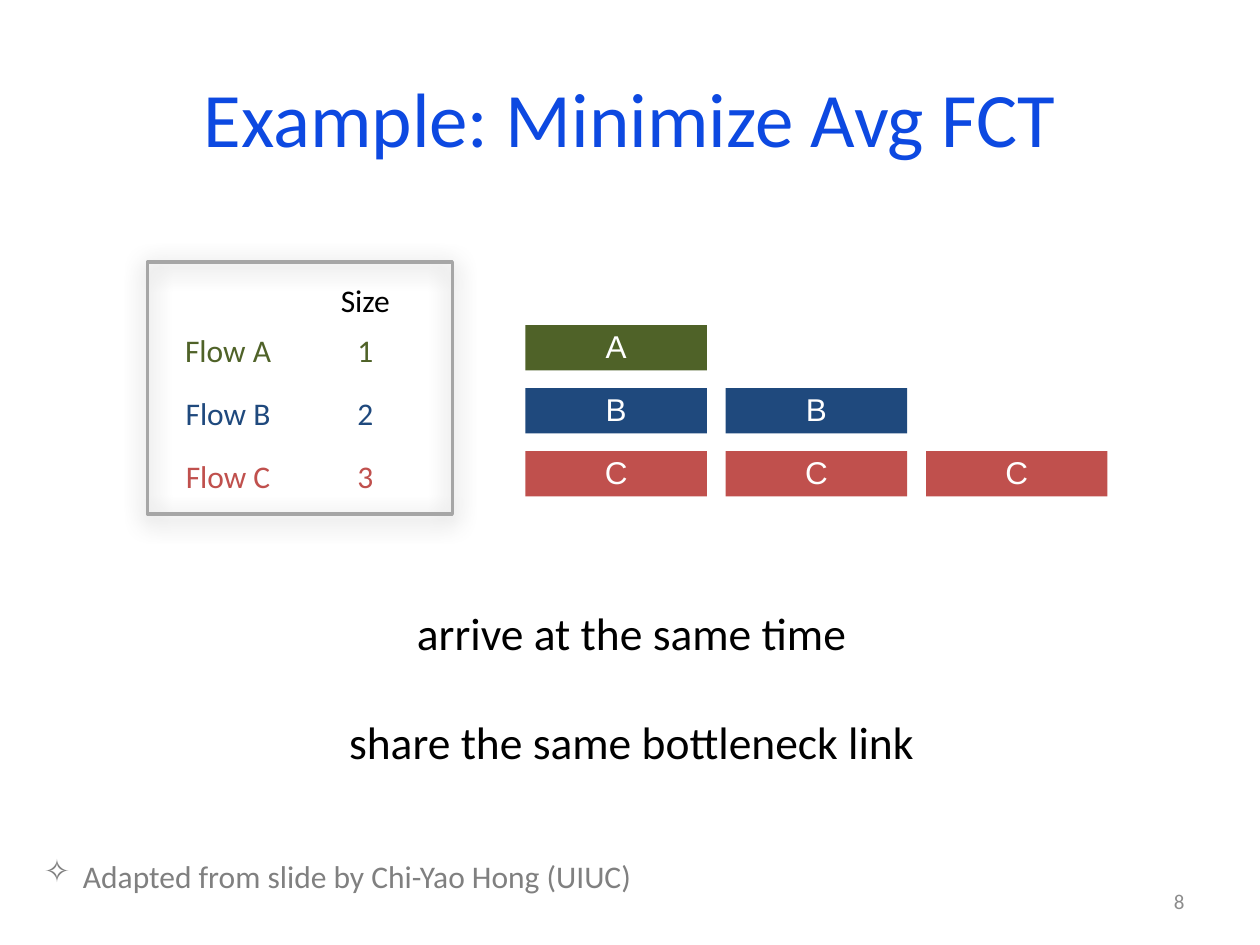
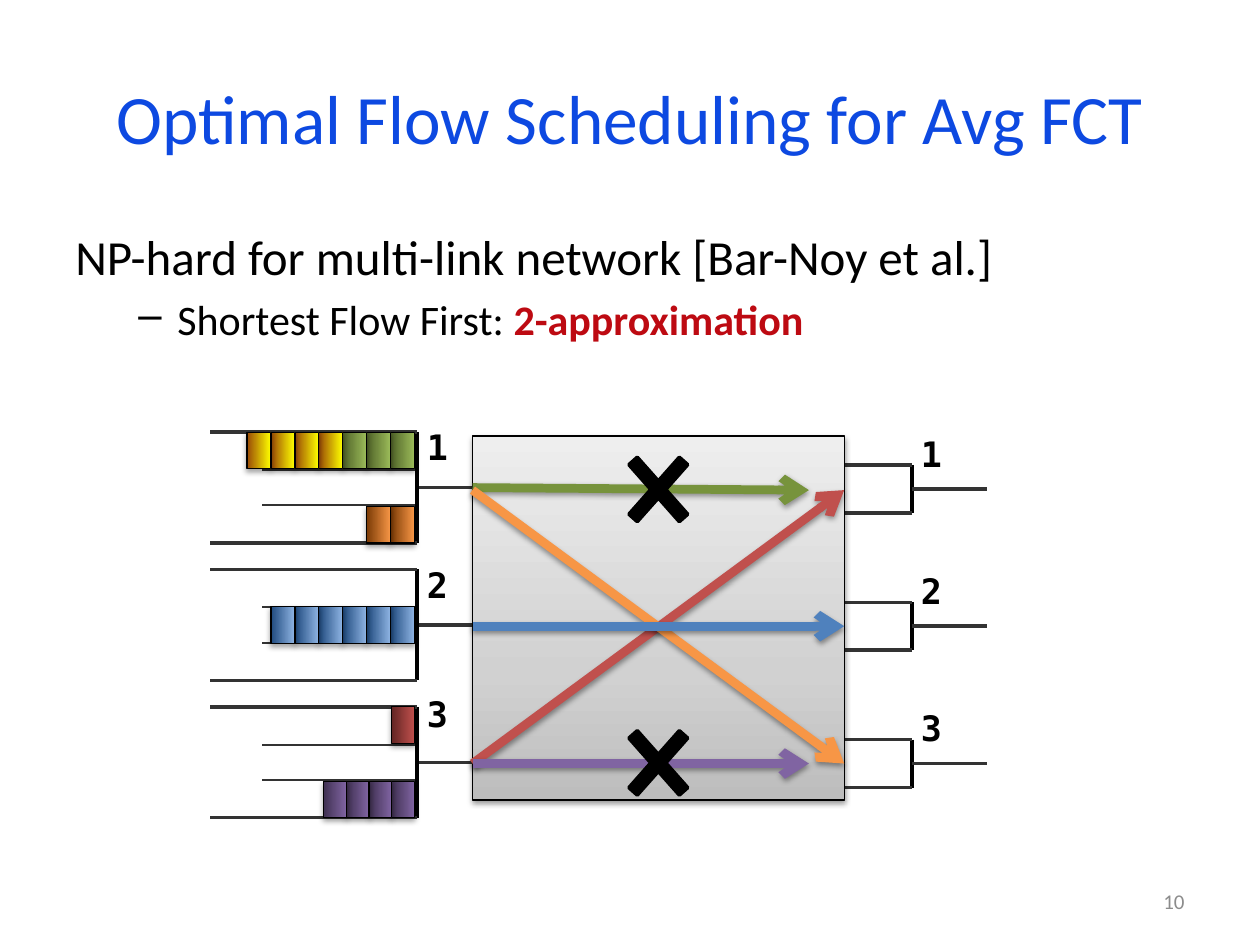
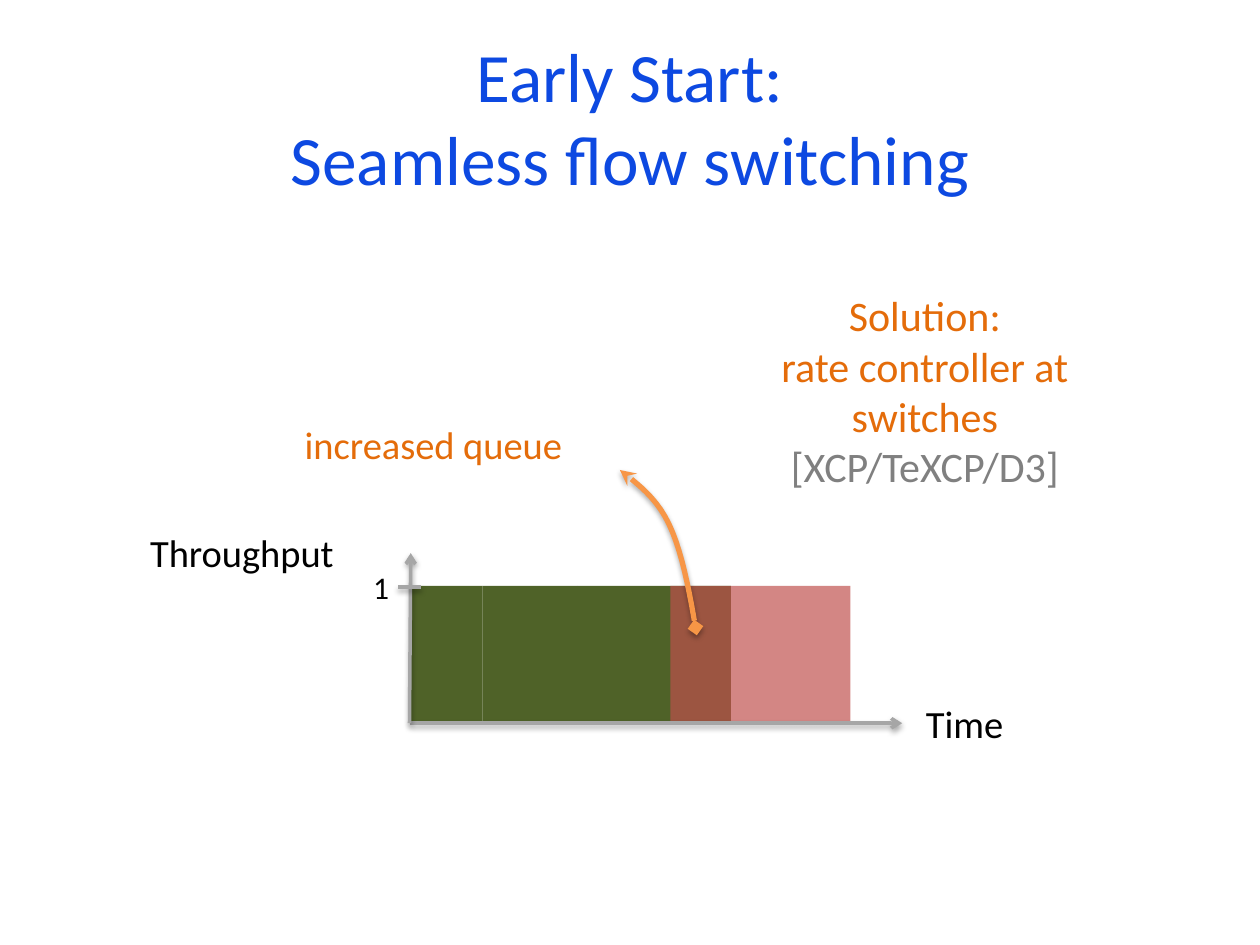
"""Builds three slides on flow scheduling."""
import math

import lxml.etree
import pptx
import pptx.dml.color
import pptx.enum.shapes
import pptx.enum.text
import pptx.oxml.ns
import pptx.util

Inches = pptx.util.Inches
Pt = pptx.util.Pt
RGBColor = pptx.dml.color.RGBColor
SHAPE = pptx.enum.shapes.MSO_SHAPE
ALIGN = pptx.enum.text.PP_ALIGN
MIDDLE = pptx.enum.text.MSO_ANCHOR.MIDDLE
qn = pptx.oxml.ns.qn

BLUE = RGBColor(0x0D, 0x49, 0xE1)
BLACK = RGBColor(0, 0, 0)
WHITE = RGBColor(0xFF, 0xFF, 0xFF)
INK = RGBColor(0x33, 0x33, 0x33)
GRAY = RGBColor(0x80, 0x80, 0x80)
PALE = RGBColor(0x8C, 0x8C, 0x8C)
SILVER = RGBColor(0xA6, 0xA6, 0xA6)
MOSS = RGBColor(0x4F, 0x62, 0x28)
NAVY = RGBColor(0x1F, 0x49, 0x7D)
BRICK = RGBColor(0xC0, 0x50, 0x4D)
CRIMSON = RGBColor(0xBD, 0x0A, 0x12)
RUST = RGBColor(0xE4, 0x6C, 0x0A)
ORANGE = RGBColor(0xF7, 0x96, 0x46)
LEAF = RGBColor(0x77, 0x93, 0x3C)
PLUM = RGBColor(0x80, 0x64, 0xA2)
SKY = RGBColor(0x4F, 0x81, 0xBD)

GREENS = ((0, MOSS), (100, RGBColor(0x9B, 0xBB, 0x59)))
YELLOWS = ((0, RGBColor(0x98, 0x48, 0x07)), (100, RGBColor(0xFF, 0xFF, 0)))
ORANGES = ((0, RGBColor(0x7A, 0x3A, 0x05)), (100, ORANGE))
BLUES = ((0, NAVY), (100, RGBColor(0x8E, 0xB4, 0xE3)))
REDS = ((0, RGBColor(0x63, 0x25, 0x23)), (100, BRICK))
PURPLES = ((0, RGBColor(0x40, 0x31, 0x52)), (100, PLUM))
STEEL = ((0, RGBColor(0xBD, 0xBD, 0xBD)), (35, RGBColor(0xD1, 0xD1, 0xD1)),
         (100, RGBColor(0xEE, 0xEE, 0xEE)))

GLOW = (40, 14, 3)
SOFT = (35, 3.1, 1.8)
DEEP = (38, 3.1, 1.6)

FLOWS = (("A", MOSS), ("B", NAVY), ("C", BRICK))


def place(box):
    """Turn a box in inches into lengths."""
    return [Inches(value) for value in box]


def add(parent, tag, **attrs):
    """Append a drawing element to its parent."""
    return lxml.etree.SubElement(parent, qn("a:" + tag), **attrs)


def cast(item, shadow=None):
    """Give an item its own shadow, or none."""
    props = item._element.spPr
    effects = props.find(qn("a:effectLst"))
    if effects is None:
        effects = add(props, "effectLst")
    if shadow:
        alpha, blur, dist = shadow
        outer = add(effects, "outerShdw", blurRad=str(Pt(blur)), dist=str(Pt(dist)),
                    dir="5400000", rotWithShape="0")
        add(add(outer, "srgbClr", val=str(BLACK)), "alpha", val=str(alpha * 1000))


def cap(item, head=None, tail=None):
    """Put arrowheads on a line."""
    for tag, kind in (("headEnd", head), ("tailEnd", tail)):
        if kind:
            add(item.line._get_or_add_ln(), tag, type=kind)


def shade(item, stops, angle=0):
    """Fill a shape with a gradient."""
    item.fill.gradient()
    item.fill.gradient_angle = angle
    holder = item._element.spPr.find(qn("a:gradFill")).find(qn("a:gsLst"))
    for old in list(holder):
        holder.remove(old)
    for spot, color in stops:
        add(add(holder, "gs", pos=str(spot * 1000)), "srgbClr", val=str(color))


def form(slide, box, fill=None, edge=None, width=0.75, shadow=None, kind=SHAPE.RECTANGLE):
    """Add a preset shape."""
    item = slide.shapes.add_shape(kind, *place(box))
    item.shadow.inherit = False
    if fill is None:
        item.fill.background()
    else:
        item.fill.solid()
        item.fill.fore_color.rgb = fill
    if edge is None:
        item.line.fill.background()
    else:
        item.line.color.rgb = edge
        item.line.width = Pt(width)
    cast(item, shadow)
    return item


def line(slide, start, end, color=INK, width=2, tail=None, shadow=None):
    """Add a straight line, with an arrowhead if asked."""
    item = slide.shapes.add_connector(
        pptx.enum.shapes.MSO_CONNECTOR.STRAIGHT, *place(start + end))
    item.line.color.rgb = color
    item.line.width = Pt(width)
    cap(item, tail=tail)
    cast(item, shadow)


def style(para, size, color, align=ALIGN.LEFT, font="Calibri", bold=False):
    """Format a paragraph."""
    para.alignment = align
    para.font.size = Pt(size)
    para.font.name = font
    para.font.bold = bold
    para.font.color.rgb = color


def text(slide, box, words, size, color=BLACK, align=ALIGN.LEFT, wrap=True, **looks):
    """Add a text box and return its frame."""
    frame = slide.shapes.add_textbox(*place(box)).text_frame
    frame.word_wrap = wrap
    frame.text = words
    for para in frame.paragraphs:
        style(para, size, color, align, **looks)
    return frame


def bullet(para, mark, left, hang):
    """Give a paragraph a bullet and a hanging indent."""
    props = para._p.get_or_add_pPr()
    props.set("marL", str(Inches(left)))
    props.set("indent", str(-Inches(hang)))
    add(props, "buChar", char=mark)


def start(deck, title, size, number=None):
    """Add a slide with its title and number."""
    slide = deck.slides.add_slide(deck.slide_layouts[5])
    head = slide.shapes.title
    head.left, head.top, head.width, head.height = place((0.5, 0.3, 9, 1.25))
    frame = head.text_frame
    frame.text = title
    frame.word_wrap = True
    frame.auto_size = pptx.enum.text.MSO_AUTO_SIZE.NONE
    frame.vertical_anchor = MIDDLE
    style(frame.paragraphs[0], size, BLUE, ALIGN.CENTER)
    if number:
        foot = text(slide, (7.17, 6.95, 2.33, 0.4), number, 12, PALE, ALIGN.RIGHT)
        foot.vertical_anchor = MIDDLE
    return slide


def sizes(slide, box):
    """Draw the framed list of flow sizes."""
    left, top = box[:2]
    cells = [("Size", 1.43, 0.1, BLACK)]
    for row, (name, color) in enumerate(FLOWS):
        y = 0.5 + 0.5 * row
        cells += [("Flow " + name, 0.18, y, color), (str(row + 1), 1.43, y, color)]
    for words, x, y, color in cells:
        wide = 0.6 if x > 1 else 0.92
        text(slide, (left + x, top + y, wide, 0.4), words, 18, color, ALIGN.CENTER, False)
    form(slide, box, edge=SILVER, width=2, shadow=GLOW)


def bars(slide, box):
    """Draw each flow as a row of unit bars."""
    left, top = box[:2]
    for row, (name, color) in enumerate(FLOWS):
        for col in range(row + 1):
            bar = form(slide, (left + 1.59 * col, top + 0.5 * row, 1.44, 0.36), color)
            bar.text_frame.text = name
            bar.text_frame.vertical_anchor = MIDDLE
            para = bar.text_frame.paragraphs[0]
            para.line_spacing = 0.93
            style(para, 18, WHITE, ALIGN.CENTER, "Arial")


def example(deck):
    """Build the slide with the three example flows."""
    slide = start(deck, "Example: Minimize Avg FCT", 44, "8")
    sizes(slide, (1.17, 2.08, 2.42, 2))
    bars(slide, (4.17, 2.58, 4.62, 1.35))
    facts = text(slide, (2.31, 4.75, 5.41, 1.41),
                 "arrive at the same time\nshare the same bottleneck link",
                 26, BLACK, ALIGN.CENTER, False)
    facts.paragraphs[1].space_before = Pt(31)
    note = text(slide, (0.25, 6.75, 9.25, 0.4), "", 18)
    para = note.paragraphs[0]
    para.text = "Adapted from slide by Chi-Yao Hong (UIUC)"
    para._p.remove(para._p.pPr)
    bullet(para, "✧", 0.31, 0.31)
    style(para, 18, GRAY)


def digit(slide, x, y, words):
    """Number a port."""
    text(slide, (x, y, 0.38, 0.44), words, 20, font="DejaVu Sans Mono", bold=True)


def inlet(slide, box, name, lift, lanes):
    """Draw an input port with its queued packets."""
    left, top, wide, high = box
    right = left + wide
    line(slide, (right, top + 0.44), (right + 0.59, top + 0.44))
    line(slide, (right, top), (right, top + high), BLACK)
    for y in (0, high):
        line(slide, (left, top + y), (right, top + y))
    for y in (0.3, 0.58):
        line(slide, (left + 0.41, top + y), (right - 0.02, top + y), width=1.25)
    digit(slide, right - 0.02, top - lift, name)
    for lane, pitch, queue in lanes:
        for spot, stops in enumerate(queue, 1):
            cell = form(slide, (right - 0.02 - spot * pitch, top + 0.295 * lane, pitch, 0.29),
                        edge=BLACK, shadow=SOFT)
            shade(cell, stops)


def outlet(slide, box, name):
    """Draw an output port."""
    left, top, wide, high = box
    right = left + wide
    line(slide, (right, top), (right, top + high), BLACK)
    for y in (0, high):
        line(slide, (left, top + y), (right, top + y))
    line(slide, (right, top + 0.19), (right + 0.59, top + 0.19))
    digit(slide, right - 0.03, top - 0.31, name)


def switch(slide, box):
    """Draw the switch with the flows that cross it."""
    left, top, wide, high = box
    shade(form(slide, box, edge=BLACK, shadow=DEEP), STEEL, 90)
    full, part = wide, 2.67
    first, mid, last = 0.43, 1.51, 2.6
    routes = ((BRICK, last, full, first, False), (LEAF, 0.41, part, first, True),
              (ORANGE, first, full, last, False), (PLUM, last, part, last, True),
              (SKY, mid, full, mid, False))
    for color, begin, reach, end, blocked in routes:
        line(slide, (left, top + begin), (left + reach, top + end), color, 5, "arrow", DEEP)
        if blocked:
            cross = form(slide, (left + 1.09, top + end - 0.44, 0.77, 0.87), BLACK, BLACK, 2,
                         kind=SHAPE.MATH_MULTIPLY)
            cross.adjustments[0] = 0.116


def optimal(deck):
    """Build the slide on optimal scheduling."""
    slide = start(deck, "Optimal Flow Scheduling for Avg FCT", 39.6, "10")
    frame = text(slide, (0.5, 1.75, 9, 1.2),
                 "NP-hard for multi-link network [Bar-Noy et al.]", 28)
    para = frame.add_paragraph()
    bullet(para, "–", 0.81, 0.31)
    para.space_before = Pt(4.8)
    style(para, 24, BLACK)
    para.add_run().text = "Shortest Flow First: "
    strong = para.add_run()
    strong.text = "2-approximation"
    strong.font.bold = True
    strong.font.color.rgb = CRIMSON
    ports = (("1", 0.1, ((0, 0.19, [GREENS] * 3 + [YELLOWS] * 4), (2, 0.19, [ORANGES] * 2))),
             ("2", 0.1, ((1, 0.19, [BLUES] * 6),)),
             ("3", 0.16, ((0, 0.18, [REDS]), (2, 0.18, [PURPLES] * 4))))
    for row, (name, lift, lanes) in enumerate(ports):
        outlet(slide, (6.5, 3.69 + 1.09 * row, 0.74, 0.38), name)
        inlet(slide, (1.67, 3.43 + 1.09 * row, 1.64, 0.88), name, lift, lanes)
    switch(slide, (3.75, 3.46, 2.95, 2.89))


def bend(points, t):
    """Return the point at t on a cubic curve."""
    return tuple(Inches(sum(math.comb(3, k) * t ** k * (1 - t) ** (3 - k) * point[axis]
                            for k, point in enumerate(points))) for axis in (0, 1))


def plot(slide, box):
    """Draw throughput over time with the overlap of two flows."""
    left, top, wide, high = box
    base = top + high
    spans = ((0, 0.58, MOSS), (0.58, 0.75, MOSS), (1.33, 1.22, MOSS),
             (2.07, 0.48, BRICK), (2.55, 0.95, BRICK))
    for x, width, color in spans:
        block = form(slide, (left + x, top, width, high), color)
        if color == BRICK:
            fill = block._element.spPr.find(qn("a:solidFill"))
            add(fill[0], "alpha", val="69000")
    for end in ((left + wide, base), (left + 0.01, top - 0.26)):
        line(slide, (left, base), end, SILVER, 2, "arrow", SOFT)
    line(slide, (left + 0.09, top + 0.01), (left - 0.09, top + 0.01), SILVER, 2, shadow=SOFT)
    text(slide, (left + 4, base - 0.23, 1, 0.47), "Time", 22)
    text(slide, (left - 0.51, top - 0.19, 0.57, 0.4), "1", 18, align=ALIGN.CENTER)
    text(slide, (left - 2.39, top - 0.5, 2.12, 0.47), "Throughput", 22, align=ALIGN.CENTER)


def pointer(slide, curves):
    """Draw a curved arrow along cubic curves."""
    steps = 10
    dots = [bend(points, step / steps) for points in curves for step in range(1, steps + 1)]
    path = slide.shapes.build_freeform(*bend(curves[0], 0), scale=1.0)
    path.add_line_segments(dots, close=False)
    item = path.convert_to_shape()
    item.shadow.inherit = False
    item.fill.background()
    item.line.color.rgb = ORANGE
    item.line.width = Pt(3)
    cap(item, "diamond", "stealth")
    cast(item, SOFT)


def early(deck):
    """Build the slide on early start."""
    slide = start(deck, "Early Start:\vSeamless flow switching", 39.6)
    plot(slide, (3.25, 4.65, 3.91, 1.09))
    pointer(slide, (((5.52, 4.98), (5.47, 4.68), (5.41, 4.37), (5.31, 4.16)),
                    ((5.31, 4.16), (5.21, 3.95), (5.06, 3.84), (4.92, 3.73))))
    text(slide, (2.32, 3.29, 2.6, 0.47), "increased queue", 22, RUST)
    frame = text(slide, (5.82, 2.25, 3.04, 1.72),
                 "Solution:\nrate controller at switches\n[XCP/TeXCP/D3]",
                 24, RUST, ALIGN.CENTER)
    frame.paragraphs[2].font.color.rgb = GRAY


def main():
    """Build the deck and save it."""
    deck = pptx.Presentation()
    deck.slide_width, deck.slide_height = place((10, 7.5))
    example(deck)
    optimal(deck)
    early(deck)
    deck.save("out.pptx")


if __name__ == "__main__":
    main()
